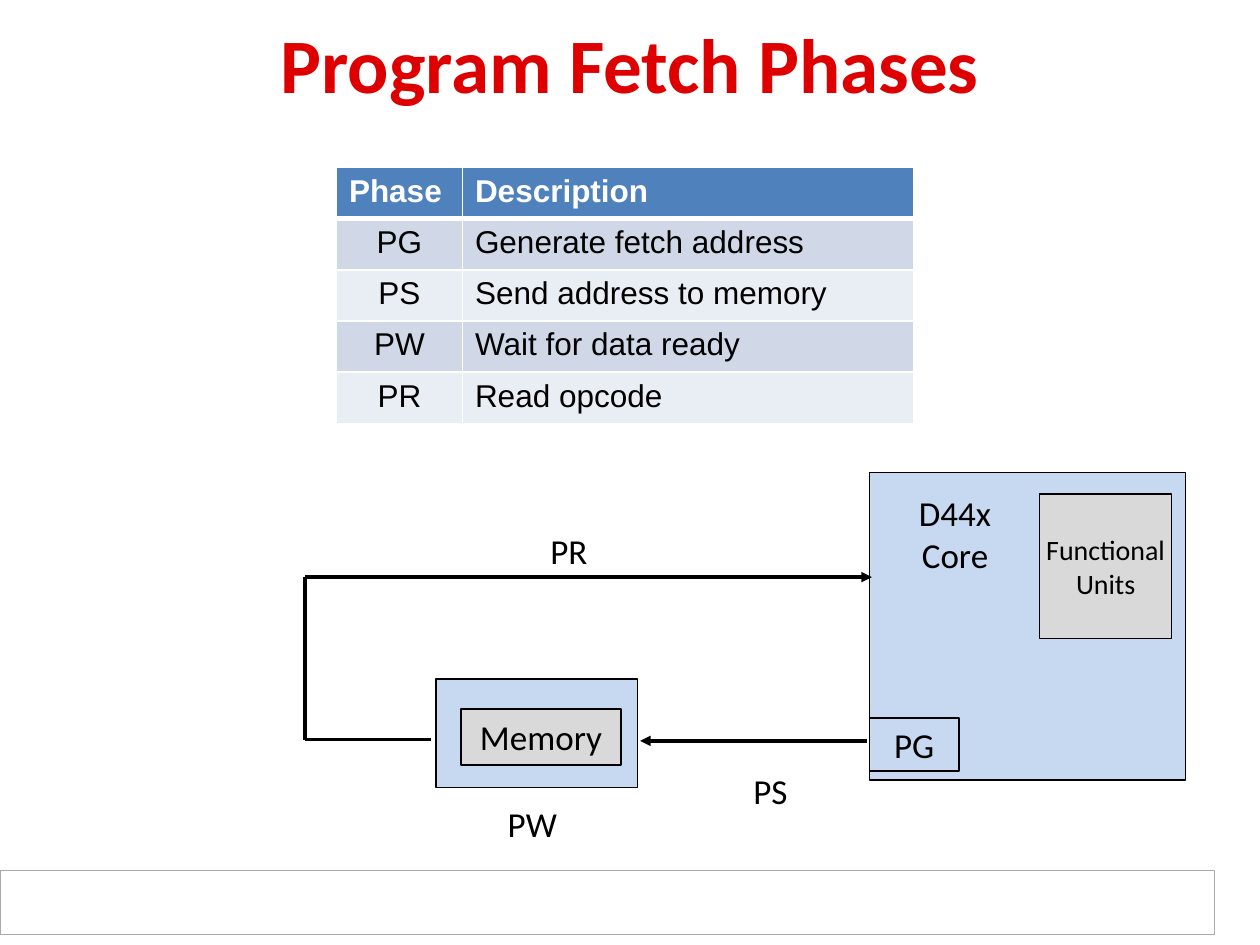
import pptx
import pptx.util
import pptx.dml.color
import pptx.enum.shapes
import pptx.enum.text
import pptx.oxml
import pptx.oxml.ns

RGB = pptx.dml.color.RGBColor
Pt = pptx.util.Pt
ALIGN = pptx.enum.text.PP_ALIGN
ANCHOR = pptx.enum.text.MSO_ANCHOR

RED = RGB(0xDE, 0x00, 0x00)
BLACK = RGB(0x00, 0x00, 0x00)
WHITE = RGB(0xFF, 0xFF, 0xFF)
SILVER = RGB(0xAA, 0xAA, 0xAA)
GREY = RGB(0xD9, 0xD9, 0xD9)
SKY = RGB(0xC6, 0xD9, 0xF1)
BLUE = RGB(0x4F, 0x81, 0xBD)
BANDS = [RGB(0xD0, 0xD8, 0xE8), RGB(0xE9, 0xED, 0xF4)]

TITLE = "Program Fetch Phases"
PHASES = [
    ("Phase", "Description"),
    ("PG", "Generate fetch address"),
    ("PS", "Send address to memory"),
    ("PW", "Wait for data ready"),
    ("PR", "Read opcode"),
]

COLS, ROWS = 100, 75
TABLE = (26.7, 13.3, 45.8, 20.3)
SPLIT = (10, 35.8)

BOXES = [
    ((0, 69.1, 96.4, 5.1), WHITE, SILVER, 0.75, None, {}),
    ((69, 37.5, 25.1, 24.4), SKY, BLACK, 1, None, {}),
    ((70.1, 38.5, 11.4, 8.1), SKY, None, 0, "D44x\vCore", {}),
    ((34.6, 53.9, 16, 8.6), SKY, BLACK, 1, None, {}),
    ((36.6, 56.3, 12.7, 4.4), GREY, BLACK, 1, "Memory", {}),
    ((69, 57, 7.1, 4.2), None, BLACK, 1, "PG", {"pad": (0.9, 0.4)}),
    ((82.5, 39.2, 10.5, 11.5), GREY, BLACK, 0.75, "Functional\nUnits",
     {"size": 16, "anchor": ANCHOR.MIDDLE, "wrap": False}),
]
LABELS = [("PW", 39, 63.3), ("PS", 57.9, 60.7), ("PR", 41.9, 41.6)]
LABEL = (6.5, 4.2)

LEFT, TOP, LOW = 24.2, 45.8, 58.7
WIRES = [
    ((50.8, 58.8), (68.8, 58.8), "headEnd"),
    ((34.2, LOW), (LEFT, LOW), None),
    ((LEFT, LOW), (LEFT, TOP), None),
    ((LEFT, TOP), (69.2, TOP), "tailEnd"),
]

deck = pptx.Presentation()
deck.slide_width = pptx.util.Inches(10)
deck.slide_height = pptx.util.Inches(7.5)
slide = deck.slides.add_slide(deck.slide_layouts[6])
shapes = slide.shapes


def across(col):
    return round(deck.slide_width * col / COLS)


def down(row):
    return round(deck.slide_height * row / ROWS)


def place(area):
    x, y, w, h = area
    return across(x), down(y), across(w), down(h)


def write(frame, text, size=20, font="Calibri", color=BLACK, bold=False,
          align=ALIGN.CENTER, anchor=ANCHOR.TOP, wrap=True, pad=(1, 0.5)):
    frame.word_wrap = wrap
    frame.vertical_anchor = anchor
    frame.margin_left = frame.margin_right = across(pad[0])
    frame.margin_top = frame.margin_bottom = down(pad[1])
    frame.text = text
    for para in frame.paragraphs:
        para.alignment = align
        for run in para.runs:
            run.font.size = Pt(size)
            run.font.name = font
            run.font.bold = bold
            run.font.color.rgb = color


def node(tag, **attrs):
    item = pptx.oxml.parse_xml(f"<a:{tag} {pptx.oxml.ns.nsdecls('a')}/>")
    for name, value in attrs.items():
        item.set(name, str(value))
    return item


def edge(cell, sides, slot):
    line = node(sides[0], w=Pt(sides[1]))
    fill = node("solidFill")
    fill.append(node("srgbClr", val=WHITE))
    line.append(fill)
    cell._tc.get_or_add_tcPr().insert(slot, line)


def draw_box(area, fill, line, width, text, style):
    box = shapes.add_shape(pptx.enum.shapes.MSO_SHAPE.RECTANGLE, *place(area))
    box.shadow.inherit = False
    if fill is None:
        box.fill.background()
    else:
        box.fill.solid()
        box.fill.fore_color.rgb = fill
    if line is None:
        box.line.fill.background()
    else:
        box.line.color.rgb = line
        box.line.width = Pt(width)
    if text:
        write(box.text_frame, text, **style)


def draw_wire(start, end, arrow):
    wire = shapes.add_connector(
        pptx.enum.shapes.MSO_CONNECTOR.STRAIGHT,
        across(start[0]), down(start[1]), across(end[0]), down(end[1]))
    wire.line.color.rgb = BLACK
    wire.line.width = Pt(2)
    if arrow:
        wire.line._get_or_add_ln().append(node(arrow, type="triangle"))
    wire._element.spPr.append(node("effectLst"))


def draw_table():
    table = shapes.add_table(len(PHASES), len(SPLIT), *place(TABLE)).table
    for col, width in zip(table.columns, SPLIT):
        col.width = across(width)
    for r, row in enumerate(PHASES):
        head = r == 0
        for c, text in enumerate(row):
            cell = table.cell(r, c)
            cell.fill.solid()
            cell.fill.fore_color.rgb = BLUE if head else BANDS[(r - 1) % 2]
            centre = c == 0 and not head
            write(cell.text_frame, text, size=18, font="Arial", bold=head,
                  color=WHITE if head else BLACK,
                  align=ALIGN.CENTER if centre else ALIGN.LEFT)
            sides = [("lnL", 1), ("lnR", 1), ("lnT", 3 if r == 1 else 1),
                     ("lnB", 3 if head else 1)]
            for slot, side in enumerate(sides):
                edge(cell, side, slot)


for box in BOXES:
    draw_box(*box)
title = shapes.add_textbox(*place((5, 0.8, 90, 8.3)))
write(title.text_frame, TITLE, size=44, color=RED, bold=True,
      anchor=ANCHOR.MIDDLE)
for text, x, y in LABELS:
    label = shapes.add_textbox(*place((x, y, *LABEL)))
    write(label.text_frame, text, pad=(0.9, 0.4))
draw_table()
for wire in WIRES:
    draw_wire(*wire)

deck.save("out.pptx")
